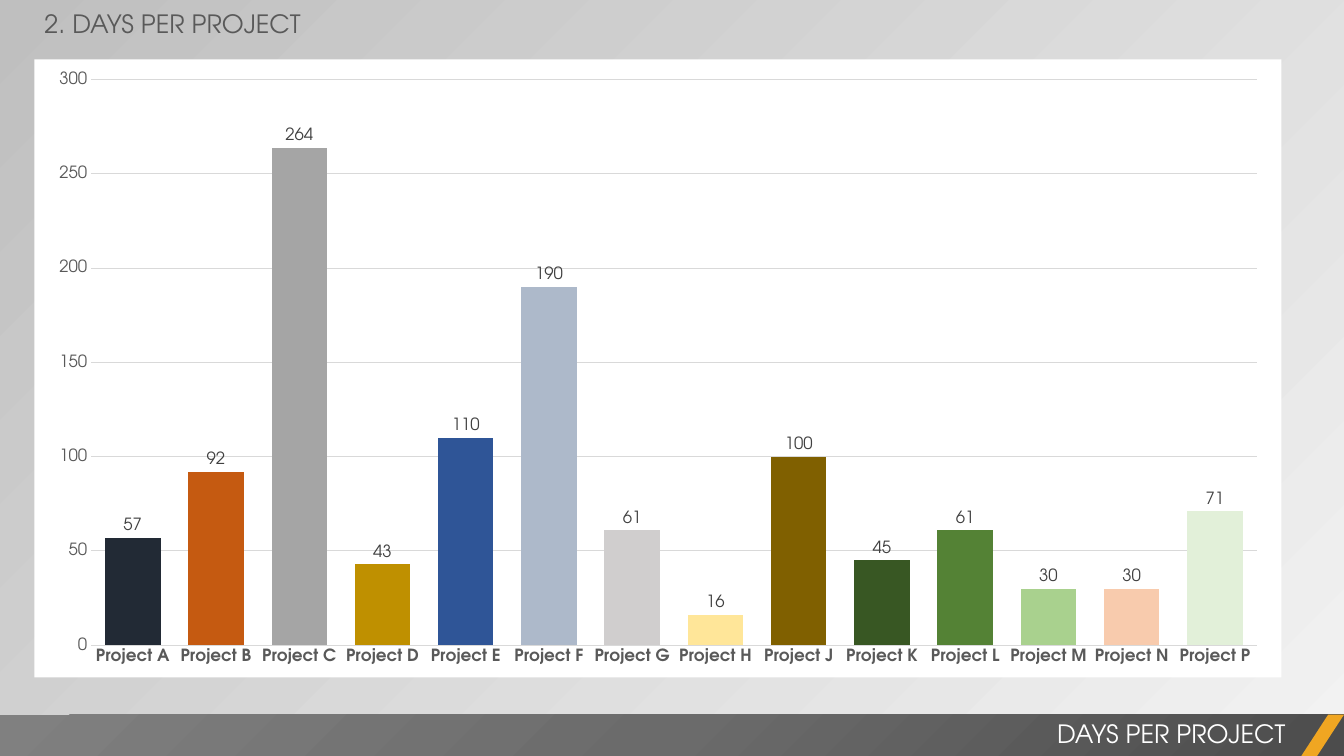
from pptx import Presentation
from pptx import util as u
from pptx.chart.data import CategoryChartData
from pptx.dml.color import RGBColor
from pptx.enum import chart as charts, shapes, text
from pptx.oxml import parse_xml
from pptx.oxml.ns import nsdecls, qn

FONT = "TeX Gyre Adventor"
WIDTH, HEIGHT = u.Inches(13.33), u.Inches(7.5)
MARGIN = 0.34 / 13.33
BAND_TOP = 7.09 / 7.5
BAND_HEIGHT = 0.42 / 7.5
GREY = RGBColor(0x59, 0x59, 0x59)
DARK_GREY = RGBColor(0x40, 0x40, 0x40)
GRID_GREY = RGBColor(0xD9, 0xD9, 0xD9)
WHITE = RGBColor(0xFF, 0xFF, 0xFF)
ORANGE = RGBColor(0xF0, 0xA6, 0x22)
BACK_LIGHT = RGBColor(0xF2, 0xF2, 0xF2)
BACK_DARK = RGBColor(0xBF, 0xBF, 0xBF)
BAND_STOPS = (
    (0, RGBColor(0x4C, 0x4C, 0x4C)),
    (50, RGBColor(0x6B, 0x6B, 0x6B)),
    (100, RGBColor(0x80, 0x80, 0x80)),
)
PROJECTS = (
    ("Project A", 57, RGBColor(0x22, 0x2A, 0x35)),
    ("Project B", 92, RGBColor(0xC5, 0x5A, 0x11)),
    ("Project C", 264, RGBColor(0xA5, 0xA5, 0xA5)),
    ("Project D", 43, RGBColor(0xBF, 0x90, 0x00)),
    ("Project E", 110, RGBColor(0x2F, 0x55, 0x97)),
    ("Project F", 190, RGBColor(0xAD, 0xB9, 0xCA)),
    ("Project G", 61, RGBColor(0xD0, 0xCE, 0xCE)),
    ("Project H", 16, RGBColor(0xFF, 0xE6, 0x99)),
    ("Project J", 100, RGBColor(0x80, 0x60, 0x00)),
    ("Project K", 45, RGBColor(0x38, 0x57, 0x23)),
    ("Project L", 61, RGBColor(0x54, 0x82, 0x35)),
    ("Project M", 30, RGBColor(0xA9, 0xD1, 0x8E)),
    ("Project N", 30, RGBColor(0xF8, 0xCB, 0xAD)),
    ("Project P", 71, RGBColor(0xE2, 0xF0, 0xD9)),
)


def box(left, top, width, height):
    return (int(left * WIDTH), int(top * HEIGHT),
            int(width * WIDTH), int(height * HEIGHT))


def style_font(font, size, color, bold=False):
    font.name = FONT
    font.size = u.Pt(size)
    font.bold = bold
    font.color.rgb = color


def write_text(shape, content, color, size=18, align=text.PP_ALIGN.LEFT, wrap=True):
    frame = shape.text_frame
    frame.word_wrap = wrap
    frame.auto_size = text.MSO_AUTO_SIZE.NONE
    frame.vertical_anchor = text.MSO_ANCHOR.TOP
    paragraph = frame.paragraphs[0]
    paragraph.alignment = align
    paragraph.line_spacing = 1.0
    paragraph.space_before = u.Pt(0)
    run = paragraph.add_run()
    run.text = content
    style_font(run.font, size, color)


def add_plain_shape(slide, kind, place, color):
    shape = slide.shapes.add_shape(kind, *place)
    shape.shadow.inherit = False
    shape.line.fill.background()
    shape.fill.solid()
    shape.fill.fore_color.rgb = color
    return shape


def fill_radial(shape, stops):
    stop_xml = "".join(
        f'<a:gs pos="{position * 1000}"><a:srgbClr val="{color}"/></a:gs>'
        for position, color in stops)
    gradient = parse_xml(
        f'<a:gradFill {nsdecls("a")} rotWithShape="1"><a:gsLst>{stop_xml}</a:gsLst>'
        '<a:path path="circle"><a:fillToRect l="100000" t="100000"/></a:path></a:gradFill>')
    properties = shape._element.spPr
    properties.replace(properties.find(qn("a:solidFill")), gradient)


def fill_background(slide):
    fill = slide.background.fill
    fill.gradient()
    fill.gradient_angle = 135
    for stop, position, color in zip(fill.gradient_stops, (0, 1), (BACK_LIGHT, BACK_DARK)):
        stop.position = position
        stop.color.rgb = color


def style_axes(chart):
    category_axis, value_axis = chart.category_axis, chart.value_axis
    for axis in (category_axis, value_axis):
        axis.major_tick_mark = charts.XL_TICK_MARK.NONE
        axis.minor_tick_mark = charts.XL_TICK_MARK.NONE
        style_font(axis.tick_labels.font, 12, GREY, bold=axis is category_axis)
    value_axis.minimum_scale = 0
    value_axis.maximum_scale = 300
    value_axis.major_unit = 50
    value_axis.format.line.fill.background()
    for line in (category_axis.format.line, value_axis.major_gridlines.format.line):
        line.color.rgb = GRID_GREY
        line.width = u.Pt(0.75)


def add_project_chart(slide, place):
    names, days, colors = zip(*PROJECTS)
    data = CategoryChartData()
    data.categories = names
    data.add_series("Series 1", days)
    chart = slide.shapes.add_chart(charts.XL_CHART_TYPE.COLUMN_CLUSTERED, *place, data).chart
    chart.has_legend = False
    chart.has_title = False
    style_font(chart.font, 10, RGBColor(0, 0, 0))
    chart._chartSpace.find(qn("c:txPr")).addprevious(parse_xml(
        f'<c:spPr {nsdecls("c", "a")}><a:solidFill><a:srgbClr val="{WHITE}"/></a:solidFill>'
        '<a:ln><a:noFill/></a:ln></c:spPr>'))
    style_axes(chart)
    plot = chart.plots[0]
    plot.gap_width = 50
    plot.vary_by_categories = False
    for index, color in enumerate(colors):
        fill = plot.series[0].points[index].format.fill
        fill.solid()
        fill.fore_color.rgb = color
    plot.has_data_labels = True
    labels = plot.data_labels
    labels.show_value = True
    labels.position = charts.XL_LABEL_POSITION.OUTSIDE_END
    style_font(labels.font, 12, DARK_GREY)


def main():
    presentation = Presentation()
    presentation.slide_width, presentation.slide_height = WIDTH, HEIGHT
    slide = presentation.slides.add_slide(presentation.slide_layouts[5])
    fill_background(slide)

    add_project_chart(slide, box(MARGIN, 0.59 / 7.5, 12.37 / 13.33, 6.13 / 7.5))

    title = slide.shapes.title
    title.left, title.top, title.width, title.height = box(MARGIN, 0.004, 0.21, 0.054)
    write_text(title, "2. DAYS PER PROJECT", GREY, wrap=False)

    band = add_plain_shape(slide, shapes.MSO_SHAPE.RECTANGLE,
                           box(0, BAND_TOP, 1, BAND_HEIGHT), GREY)
    fill_radial(band, BAND_STOPS)
    footer = slide.shapes.add_textbox(*box(5.25 / 13.33, 7.08 / 7.5, 0.57, 0.054))
    write_text(footer, "DAYS PER PROJECT", WHITE, align=text.PP_ALIGN.RIGHT)
    slash = add_plain_shape(slide, shapes.MSO_SHAPE.PARALLELOGRAM,
                            box(12.9 / 13.33, BAND_TOP, 0.43 / 13.33, BAND_HEIGHT), ORANGE)
    slash.adjustments[0] = 0.65

    presentation.save("out.pptx")


if __name__ == "__main__":
    main()
